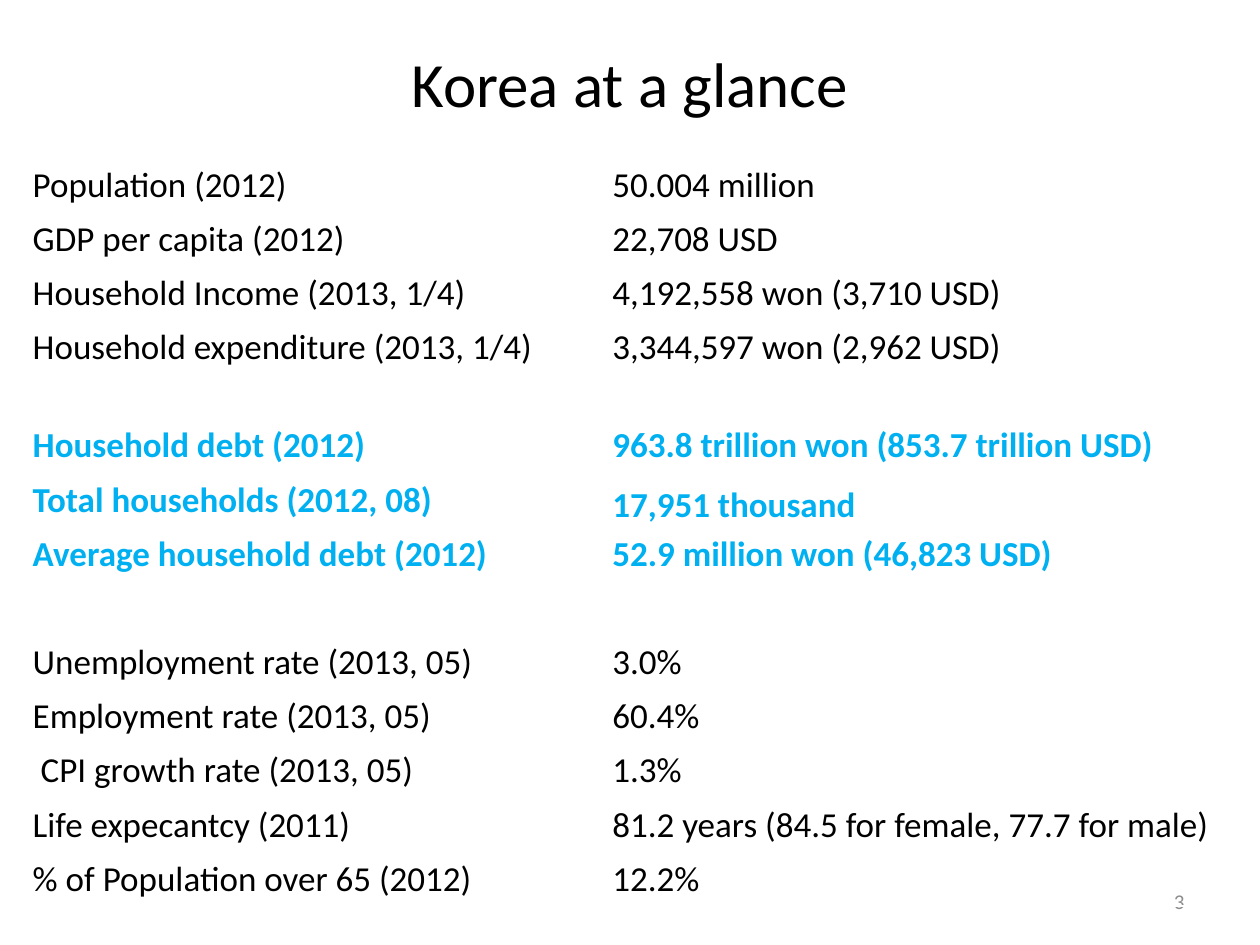
from pptx import Presentation
from pptx import util as u
from pptx.dml import color
from pptx.enum import text

BLACK, HIGHLIGHT, GREY = "000000", "00B0F0", "8C8C8C"
ROW_HEIGHT, GAP_HEIGHT = 0.43, 0.35
MIDDLE, BOTTOM = text.MSO_ANCHOR.MIDDLE, text.MSO_ANCHOR.BOTTOM

ECONOMY = [
    ("Population (2012)", "50.004 million"),
    ("GDP per capita (2012)", "22,708 USD"),
    ("Household Income (2013, 1/4)", "4,192,558 won (3,710 USD)"),
    ("Household expenditure (2013, 1/4)", "3,344,597 won (2,962 USD)"),
]
DEBT = [
    ("Household debt (2012)", "963.8 trillion won (853.7 trillion USD)"),
    ("Total households (2012, 08)", "17,951 thousand"),
    ("Average household debt (2012)", "52.9 million won (46,823 USD)"),
]
SOCIETY = [
    ("Unemployment rate (2013, 05)", "3.0%"),
    ("Employment rate (2013, 05)", "60.4%"),
    (" CPI growth rate (2013, 05)", "1.3%"),
    ("Life expecantcy (2011)", "81.2 years (84.5 for female, 77.7 for male)"),
    ("% of Population over 65 (2012)", "12.2%"),
]
SEPARATOR = ("", "")
INDICATORS = [*ECONOMY, SEPARATOR, *DEBT, SEPARATOR, *SOCIETY]


def rgb(value):
    return color.RGBColor.from_string(value)


def apply(target, values):
    for name, value in values.items():
        setattr(target, name, value)


class GlanceSlide:
    """Holds the text style and the slide being built."""

    font = "Calibri"
    cell_format = {
        "margin_left": u.Inches(0.01),
        "margin_right": u.Inches(0.01),
        "margin_top": u.Inches(0.01),
        "margin_bottom": 0,
    }

    def __init__(self, deck):
        self.slide = deck.slides.add_slide(deck.slide_layouts[6])

    def add_wording(self, paragraph, wording, size, ink=BLACK, bold=False):
        run = paragraph.add_run()
        run.text = wording
        apply(run.font, {"name": self.font, "size": u.Pt(size), "bold": bold})
        run.font.color.rgb = rgb(ink)

    def label(self, wording, place, size, align, ink=BLACK):
        frame = self.slide.shapes.add_textbox(*map(u.Inches, place)).text_frame
        apply(frame, {"word_wrap": True, "vertical_anchor": MIDDLE})
        frame.paragraphs[0].alignment = align
        self.add_wording(frame.paragraphs[0], wording, size, ink)

    def table(self, rows, left, top, widths, size):
        heights = [ROW_HEIGHT if name else GAP_HEIGHT for name, _ in rows]
        heights[rows.index(SEPARATOR) + len(DEBT) + 1] = ROW_HEIGHT
        place = map(u.Inches, (left, top, sum(widths), sum(heights)))
        grid = self.slide.shapes.add_table(len(rows), len(widths), *place).table
        apply(grid, {"first_row": False, "horz_banding": False})
        for column, width in zip(grid.columns, widths):
            column.width = u.Inches(width)
        for line, height, entries in zip(grid.rows, heights, rows):
            line.height = u.Inches(height)
            is_debt = entries in DEBT
            for cell, wording in zip(line.cells, entries):
                anchor = BOTTOM if wording == "17,951 thousand" else MIDDLE
                apply(cell, {**self.cell_format, "vertical_anchor": anchor})
                cell.fill.background()
                if wording:
                    ink = HIGHLIGHT if is_debt else BLACK
                    self.add_wording(cell.text_frame.paragraphs[0], wording, size, ink, is_debt)


def main():
    deck = Presentation()
    apply(deck, {"slide_width": u.Inches(10), "slide_height": u.Inches(7.5)})
    glance = GlanceSlide(deck)
    glance.label("Korea at a glance", (0.5, 0.3, 9, 0.7), 36, text.PP_ALIGN.CENTER)
    glance.label("3", (7.17, 6.95, 2.33, 0.4), 12, text.PP_ALIGN.RIGHT, GREY)
    glance.table(INDICATORS, 0.25, 1.25, (4.6, 4.81), 20)
    deck.save("out.pptx")


if __name__ == "__main__":
    main()
